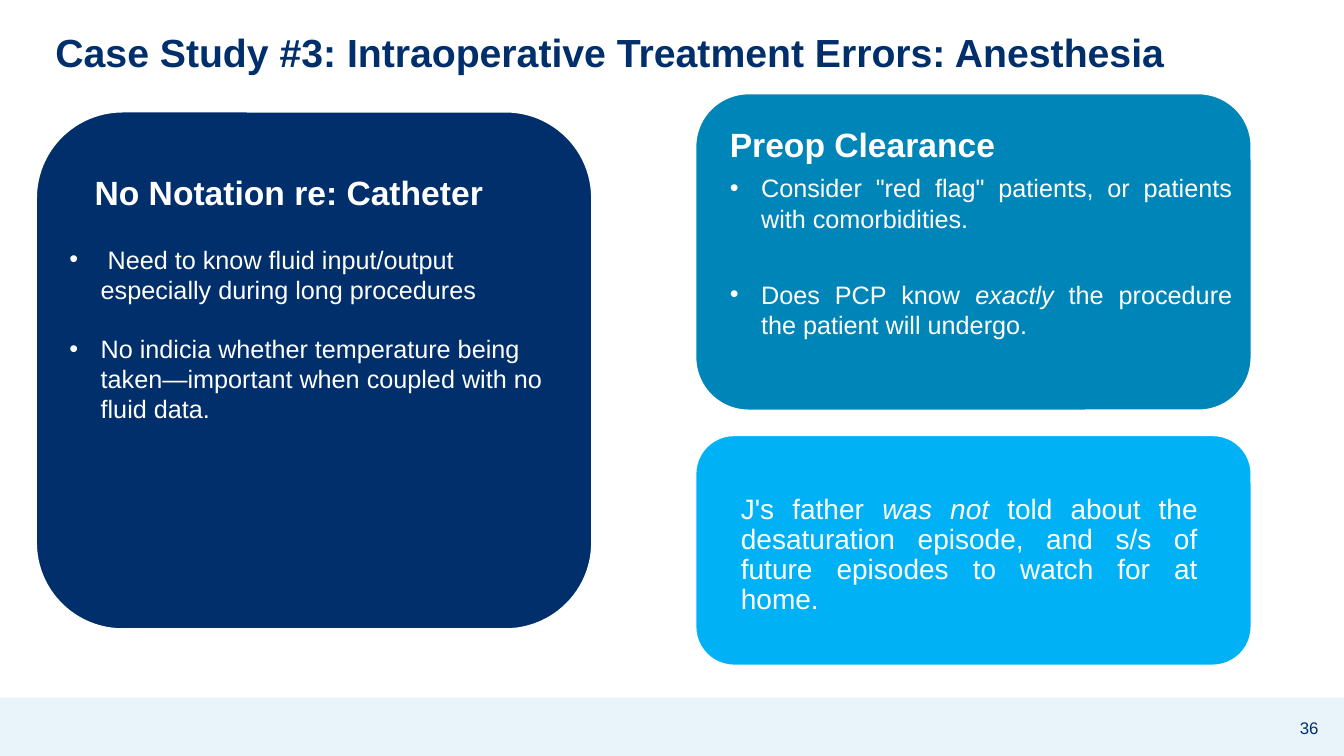
from dataclasses import dataclass

from lxml.etree import SubElement
from pptx import Presentation
from pptx.dml.color import RGBColor
from pptx.enum.shapes import MSO_SHAPE
from pptx.enum.text import MSO_ANCHOR, MSO_AUTO_SIZE, PP_ALIGN
from pptx.oxml.ns import qn
from pptx.slide import Slide
from pptx.text.text import TextFrame
from pptx.util import Inches, Pt

COLORS = {
    "navy": "002F6B",
    "teal": "0085B8",
    "sky": "00B2F5",
    "footer": "E8F4FA",
    "white": "FFFFFF",
}
FONT = "Arial"


@dataclass(frozen=True)
class Box:
    left: float
    top: float
    width: float
    height: float

    def lengths(self) -> list[Inches]:
        return [Inches(n) for n in (self.left, self.top, self.width, self.height)]


@dataclass(frozen=True)
class Card:
    box: Box
    color: str


@dataclass(frozen=True)
class Passage:
    phrases: tuple[str, ...]
    size: float
    bold: bool = False
    bullet: bool = False
    align: PP_ALIGN = PP_ALIGN.JUSTIFY
    before: float = 0
    after: float = 0
    spacing: float = 1.0
    color: str = "white"


@dataclass(frozen=True)
class TextBlock:
    box: Box
    passages: tuple[Passage, ...]
    anchor: MSO_ANCHOR = MSO_ANCHOR.TOP


TITLE = TextBlock(
    Box(0.45, 0.15, 12.09, 0.78),
    (Passage(("Case Study #3: Intraoperative Treatment Errors: Anesthesia",), 28,
             bold=True, align=PP_ALIGN.LEFT, spacing=0.9, color="navy"),),
    MSO_ANCHOR.MIDDLE,
)

CARDS = (
    Card(Box(0.36, 1.11, 5.51, 5.13), "navy"),
    Card(Box(6.9, 0.93, 5.51, 3.14), "teal"),
    Card(Box(6.9, 4.32, 5.51, 2.28), "sky"),
)

TEXT_BLOCKS = (
    TextBlock(Box(0.84, 1.66, 4.88, 0.5), (
        Passage(("No Notation re: Catheter",), 24, bold=True),
    )),
    TextBlock(Box(0.59, 2.37, 5.02, 1.92), (
        Passage((" Need to know fluid input/output especially during long procedures",),
                18, bullet=True, align=PP_ALIGN.LEFT),
        Passage(("No indicia whether temperature being taken—important when "
                 "coupled with no fluid data.",),
                18, bullet=True, align=PP_ALIGN.LEFT, before=20.7),
    )),
    TextBlock(Box(7.14, 1.18, 5.18, 2.66), (
        Passage(("Preop Clearance",), 24, bold=True, after=6),
        Passage(('Consider "red flag" patients, or patients with comorbidities.',),
                18, bullet=True, after=6),
        Passage(("Does PCP know ", "exactly", " the procedure the patient will undergo."),
                18, bullet=True, before=26.7, after=6),
    )),
    TextBlock(Box(7.25, 4.86, 4.73, 1.59), (
        Passage(("J's father ", "was not", " told about the desaturation episode, "
                 "and s/s of future episodes to watch for at home."),
                20, spacing=0.9),
    )),
    TextBlock(Box(12.68, 7.02, 0.61, 0.4), (
        Passage(("36",), 12, align=PP_ALIGN.CENTER, color="navy"),
    ), MSO_ANCHOR.MIDDLE),
)


def rgb(name: str) -> RGBColor:
    return RGBColor.from_string(COLORS[name])


def write_passages(frame: TextFrame, block: TextBlock) -> None:
    frame.word_wrap = True
    frame.auto_size = MSO_AUTO_SIZE.NONE
    frame.vertical_anchor = block.anchor
    for index, passage in enumerate(block.passages):
        paragraph = frame.add_paragraph() if index else frame.paragraphs[0]
        paragraph.alignment = passage.align
        paragraph.line_spacing = passage.spacing
        paragraph.space_before = Pt(passage.before)
        paragraph.space_after = Pt(passage.after)
        if passage.bullet:
            properties = paragraph._p.get_or_add_pPr()
            properties.set("marL", str(Inches(0.31)))
            properties.set("indent", str(Inches(-0.31)))
            SubElement(properties, qn("a:buFont"), typeface=FONT)
            SubElement(properties, qn("a:buChar"), char="•")
        for position, phrase in enumerate(passage.phrases):
            run = paragraph.add_run()
            run.text = phrase
            run.font.name = FONT
            run.font.size = Pt(passage.size)
            run.font.bold = passage.bold
            run.font.italic = position == 1
            run.font.color.rgb = rgb(passage.color)


def draw_footer(slide: Slide) -> None:
    footer = slide.shapes.add_shape(
        MSO_SHAPE.RECTANGLE, *Box(0, 6.92, 13.33, 0.58).lengths())
    footer.shadow.inherit = False
    footer.fill.solid()
    footer.fill.fore_color.rgb = rgb("footer")
    footer.line.fill.background()


def draw_card(slide: Slide, card: Card) -> None:
    panel = slide.shapes.add_shape(MSO_SHAPE.ROUNDED_RECTANGLE, *card.box.lengths())
    panel.shadow.inherit = False
    panel.fill.solid()
    panel.fill.fore_color.rgb = rgb(card.color)
    panel.line.color.rgb = rgb("white")
    panel.line.width = Pt(1)


def draw_title(slide: Slide) -> None:
    title = slide.shapes.title
    title.left, title.top, title.width, title.height = TITLE.box.lengths()
    write_passages(title.text_frame, TITLE)


def draw_text(slide: Slide, block: TextBlock) -> None:
    text_box = slide.shapes.add_textbox(*block.box.lengths())
    write_passages(text_box.text_frame, block)


def main() -> None:
    presentation = Presentation()
    presentation.slide_width = Inches(13.33)
    presentation.slide_height = Inches(7.5)
    slide = presentation.slides.add_slide(presentation.slide_layouts[5])
    draw_footer(slide)
    draw_title(slide)
    for card in CARDS:
        draw_card(slide, card)
    for block in TEXT_BLOCKS:
        draw_text(slide, block)
    presentation.save("out.pptx")


if __name__ == "__main__":
    main()
